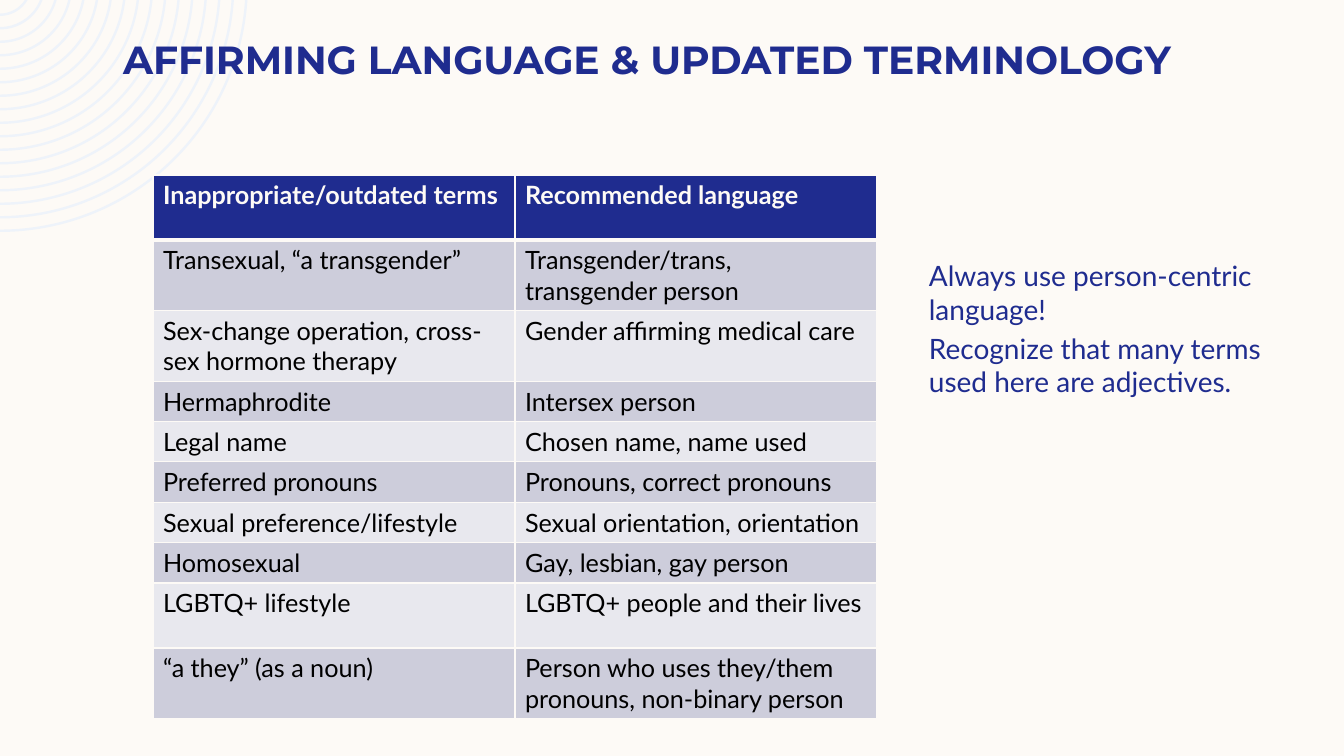
from math import asin, cos, degrees, sin

from lxml import etree
from pptx import Presentation
from pptx.dml.color import RGBColor
from pptx.enum.text import MSO_ANCHOR, PP_ALIGN
from pptx.oxml.ns import qn
from pptx.util import Pt

CENTER, LEFT = PP_ALIGN.CENTER, PP_ALIGN.LEFT
TOP = MSO_ANCHOR.TOP

SLIDE_W, SLIDE_H = 1344, 756
PX = 12192000 / SLIDE_W

COLORS = {
    "cream": "FDFAF6",
    "navy": "1F2C8F",
    "rings": "EEF3FA",
    "black": "000000",
    "band_dark": "CDCDDB",
    "band_light": "E8E8EE",
}

TITLE = "AFFIRMING LANGUAGE & UPDATED TERMINOLOGY"
ADVICE = [
    "Always use person-centric language!",
    "Recognize that many terms used here are adjectives.",
]
# Each row: outdated term, recommended language, row height in px
TERMS = [
    ("Inappropriate/outdated terms", "Recommended language", 65),
    ("Transexual, “a transgender”", "Transgender/trans, transgender person", 65),
    ("Sex-change operation, cross-sex hormone therapy", "Gender affirming medical care", 65),
    ("Hermaphrodite", "Intersex person", 37),
    ("Legal name", "Chosen name, name used", 37),
    ("Preferred pronouns", "Pronouns, correct pronouns", 37),
    ("Sexual preference/lifestyle", "Sexual orientation, orientation", 37),
    ("Homosexual", "Gay, lesbian, gay person", 37),
    ("LGBTQ+ lifestyle", "LGBTQ+ people and their lives", 65),
    ("“a they” (as a noun)", "Person who uses they/them pronouns, non-binary person", 65),
]


def px(length):
    return round(length * PX)


def rgb(name):
    return RGBColor.from_string(COLORS[name])


def style(paragraph, font, size, color, bold=False):
    paragraph.font.name = font
    paragraph.font.size = Pt(size)
    paragraph.font.bold = bold
    paragraph.font.color.rgb = rgb(color)


def add_rings(slide, outer_radius, center_y):
    """Concentric rings around a point above the corner, cut off by the slide edge."""
    count, gap, thickness, fine = 17, 13.5, 2.4, 100
    builder, arcs = None, []
    for ring in range(count):
        outer = outer_radius - gap * ring
        inner = outer - thickness
        outer_start, inner_start = (asin(-center_y / r) for r in (outer, inner))
        corners = [
            (outer * cos(outer_start), center_y + outer * sin(outer_start)),
            (0, center_y + outer),
            (0, center_y + inner),
            (inner * cos(inner_start), center_y + inner * sin(inner_start)),
        ]
        corners = [(round(x * fine), round(y * fine)) for x, y in corners]
        if builder is None:
            builder = slide.shapes.build_freeform(*corners[0], scale=PX / fine)
        else:
            builder.move_to(*corners[0])
        builder.add_line_segments(corners[1:], close=True)
        outer_angle, inner_angle = degrees(outer_start), degrees(inner_start)
        arcs += [(outer, outer_angle, 90 - outer_angle), None,
                 (inner, 90, inner_angle - 90)]
    rings = builder.convert_to_shape()

    # Bend the two long sides of every ring
    for side, arc in zip(list(rings._element.iter(qn("a:lnTo"))), arcs):
        if arc:
            radius, start, sweep = arc
            bend = etree.Element(qn("a:arcTo"))
            for key, value in (("wR", radius * fine), ("hR", radius * fine),
                               ("stAng", start * 60000), ("swAng", sweep * 60000)):
                bend.set(key, str(round(value)))
            side.getparent().replace(side, bend)
    rings.shadow.inherit = False
    rings.fill.solid()
    rings.fill.fore_color.rgb = rgb("rings")
    rings.line.fill.background()


def add_text(slide, box, lines, font, size, bold=False, align=LEFT, gap=0):
    frame = slide.shapes.add_textbox(*map(px, box)).text_frame
    frame.word_wrap = True
    frame.vertical_anchor = TOP
    for i, line in enumerate(lines):
        paragraph = frame.paragraphs[0] if i == 0 else frame.add_paragraph()
        paragraph.text = line
        paragraph.alignment = align
        if i:
            paragraph.space_before = Pt(gap)
        style(paragraph, font, size, "navy", bold)


def set_borders(cell, widths):
    """Widths in points for the left, right, top and bottom sides."""
    properties = cell._tc.get_or_add_tcPr()
    for side, width in zip("LRTB", widths):
        line = etree.SubElement(properties, qn(f"a:ln{side}"), w=str(Pt(width)))
        fill = etree.SubElement(line, qn("a:solidFill"))
        etree.SubElement(fill, qn("a:srgbClr"), val=COLORS["cream"])


def add_terms_table(slide, left, top, width):
    height = sum(row[-1] for row in TERMS)
    table = slide.shapes.add_table(
        len(TERMS), 2, px(left), px(top), px(width), px(height)).table
    table.horz_banding = False
    for column in table.columns:
        column.width = px(width / 2)
    for r, (outdated, recommended, row_height) in enumerate(TERMS):
        table.rows[r].height = px(row_height)
        header = r == 0
        band = "navy" if header else "band_dark" if r % 2 else "band_light"
        for c, term in enumerate((outdated, recommended)):
            cell = table.cell(r, c)
            set_borders(cell, (1, 1, 3 if r == 1 else 1, 3 if header else 1))
            cell.fill.solid()
            cell.fill.fore_color.rgb = rgb(band)
            cell.text = term
            style(cell.text_frame.paragraphs[0], "Lato", 18,
                  "cream" if header else "black", header)


def build_terminology_slide(presentation):
    slide = presentation.slides.add_slide(presentation.slide_layouts[6])
    slide.background.fill.solid()
    slide.background.fill.fore_color.rgb = rgb("cream")
    # Corner decoration
    add_rings(slide, 248, -16)
    # Title
    add_text(slide, (59, 30, 1176, 85), [TITLE], "Montserrat", 28, True, CENTER)
    # Advice beside the table
    add_text(slide, (919, 254, 373, 124), ADVICE, "Lato", 20, gap=3.6)
    # Terms
    add_terms_table(slide, 153, 175, 724)


def main():
    presentation = Presentation()
    presentation.slide_width = px(SLIDE_W)
    presentation.slide_height = px(SLIDE_H)
    build_terminology_slide(presentation)
    presentation.save("out.pptx")


if __name__ == "__main__":
    main()
